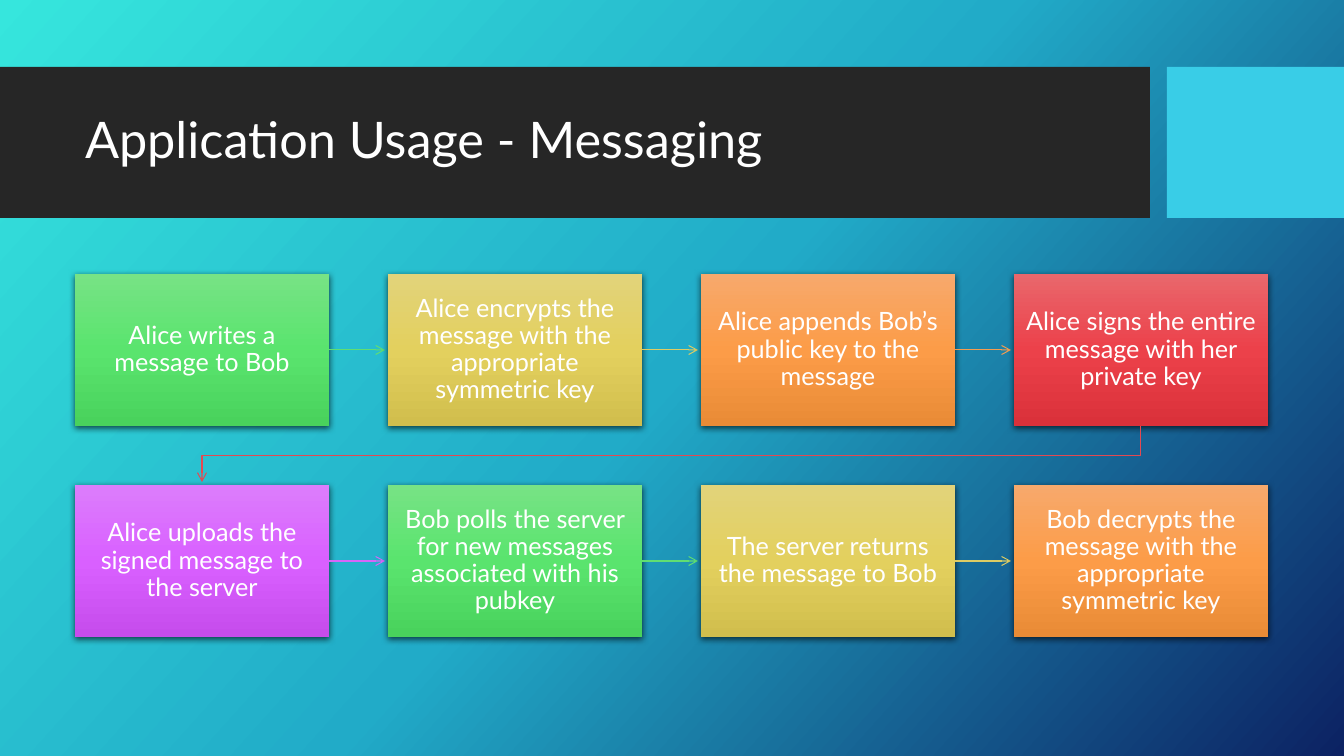
"""Build the messaging flow slide: eight steps in two rows joined by arrows."""
import copy

import pptx
import pptx.dml.color
import pptx.enum.shapes
import pptx.enum.text
import pptx.oxml
import pptx.oxml.ns
import pptx.util

TITLE = "Application Usage - Messaging"
STEPS = [
    "Alice writes a message to Bob",
    "Alice encrypts the message with the appropriate symmetric key",
    "Alice appends Bob’s public key to the message",
    "Alice signs the entire message with her private key",
    "Alice uploads the signed message to the server",
    "Bob polls the server for new messages associated with his pubkey",
    "The server returns the message to Bob",
    "Bob decrypts the message with the appropriate symmetric key",
]
THEMES = [
    (("77E385", "5AE46E", "49D25C"), "60DE72"),
    (("E2D37A", "E3D05E", "D1BE4D"), "DDCC64"),
    (("F7A96C", "FC9C48", "E98B36"), "F49D50"),
    (("E9676C", "EC414A", "DA313A"), "E44951"),
    (("DC7DFC", "D960FF", "C64CEC"), "D666F9"),
]
BACKGROUND = ("36E6DD", "21ABC8", "0C2263")
BANDS = [((0, 67, 1150, 151), "262626"), ((1167, 67, 177, 151), "39CDE7")]
TITLE_BOX = (75, 83, 1059, 119)
FONT, WHITE = "Lato", "FFFFFF"

SCALE = 9071.43
COLUMNS = 4
LEFT, TOP = 75, 274
WIDTH, HEIGHT = 254, 152
COLUMN_STEP, ROW_STEP = 313, 211
ARROW_GAP = 3

SHADOW = (
    '<a:outerShdw %s blurRad="57150" dist="19050" dir="5400000" algn="ctr" '
    'rotWithShape="0"><a:srgbClr val="000000"><a:alpha val="63000"/>'
    "</a:srgbClr></a:outerShdw>"
) % pptx.oxml.ns.nsdecls("a")


def px(length):
    return pptx.util.Emu(round(length * SCALE))


def color(value):
    return pptx.dml.color.RGBColor.from_string(value)


def set_gradient(fill, element, colors, angle):
    fill.gradient()
    fill.gradient_angle = 360 - angle
    stop_list = element.find(".//" + pptx.oxml.ns.qn("a:gsLst"))
    stop_list.append(copy.deepcopy(stop_list[0]))
    for index, (stop, value) in enumerate(zip(fill.gradient_stops, colors)):
        stop.color.rgb = color(value)
        stop.position = index / (len(colors) - 1)


def add_rectangle(slide, box):
    shape = slide.shapes.add_shape(
        pptx.enum.shapes.MSO_SHAPE.RECTANGLE, *map(px, box))
    shape.line.fill.background()
    shape.shadow.inherit = False
    return shape


def set_text(shape, text, size, alignment, insets):
    frame = shape.text_frame
    frame.word_wrap = True
    frame.vertical_anchor = pptx.enum.text.MSO_ANCHOR.MIDDLE
    frame.margin_left = frame.margin_right = px(insets[0])
    frame.margin_top = frame.margin_bottom = px(insets[1])
    paragraph = frame.paragraphs[0]
    paragraph.text = text
    paragraph.alignment = alignment
    paragraph.line_spacing = 0.9
    paragraph.font.name = FONT
    paragraph.font.size = pptx.util.Pt(size)
    paragraph.font.color.rgb = color(WHITE)


def style_arrow(arrow, value):
    arrow.line.color.rgb = color(value)
    arrow.line.width = pptx.util.Pt(0.75)
    properties = arrow._element.spPr
    line = properties.find(pptx.oxml.ns.qn("a:ln"))
    line.append(pptx.oxml.parse_xml(
        '<a:tailEnd %s type="arrow"/>' % pptx.oxml.ns.nsdecls("a")))
    if properties.find(pptx.oxml.ns.qn("a:effectLst")) is None:
        line.addnext(pptx.oxml.parse_xml(
            "<a:effectLst %s/>" % pptx.oxml.ns.nsdecls("a")))


def add_step(slide, text, colors, left, top):
    shape = add_rectangle(slide, (left, top, WIDTH, HEIGHT))
    set_gradient(shape.fill, shape._element, colors, 90)
    effects = shape._element.spPr.find(pptx.oxml.ns.qn("a:effectLst"))
    effects.append(pptx.oxml.parse_xml(SHADOW))
    set_text(shape, text, 18, pptx.enum.text.PP_ALIGN.CENTER, (12, 13))
    return shape


def add_straight_arrow(slide, step, left, top):
    middle = px(top + HEIGHT / 2)
    arrow = slide.shapes.add_connector(
        pptx.enum.shapes.MSO_CONNECTOR.STRAIGHT, px(left + WIDTH), middle,
        px(left + COLUMN_STEP - ARROW_GAP), middle)
    arrow.begin_connect(step, 3)
    return arrow


def add_return_arrow(slide, left, top):
    start, end = left + WIDTH / 2, LEFT + WIDTH / 2
    bottom, next_top = top + HEIGHT, top + ROW_STEP
    turn = (bottom + next_top) / 2
    builder = slide.shapes.build_freeform(px(start), px(bottom))
    corners = [(start, turn), (end, turn), (end, next_top - ARROW_GAP)]
    builder.add_line_segments([(px(x), px(y)) for x, y in corners], close=False)
    arrow = builder.convert_to_shape()
    arrow.fill.background()
    arrow.shadow.inherit = False
    return arrow


def main():
    presentation = pptx.Presentation()
    presentation.slide_width, presentation.slide_height = px(1344), px(756)
    slide = presentation.slides.add_slide(presentation.slide_layouts[6])
    set_gradient(slide.background.fill, slide._element, BACKGROUND, 42)

    for box, value in BANDS:
        band = add_rectangle(slide, box)
        band.fill.solid()
        band.fill.fore_color.rgb = color(value)
    title = slide.shapes.add_textbox(*map(px, TITLE_BOX))
    set_text(title, TITLE, 36, pptx.enum.text.PP_ALIGN.LEFT, (10, 5))

    for index, text in enumerate(STEPS):
        row, column = divmod(index, COLUMNS)
        left, top = LEFT + column * COLUMN_STEP, TOP + row * ROW_STEP
        colors, arrow_color = THEMES[index % len(THEMES)]
        step = add_step(slide, text, colors, left, top)
        if index == len(STEPS) - 1:
            break
        if column < COLUMNS - 1:
            arrow = add_straight_arrow(slide, step, left, top)
        else:
            arrow = add_return_arrow(slide, left, top)
        style_arrow(arrow, arrow_color)

    presentation.save("out.pptx")


if __name__ == "__main__":
    main()
